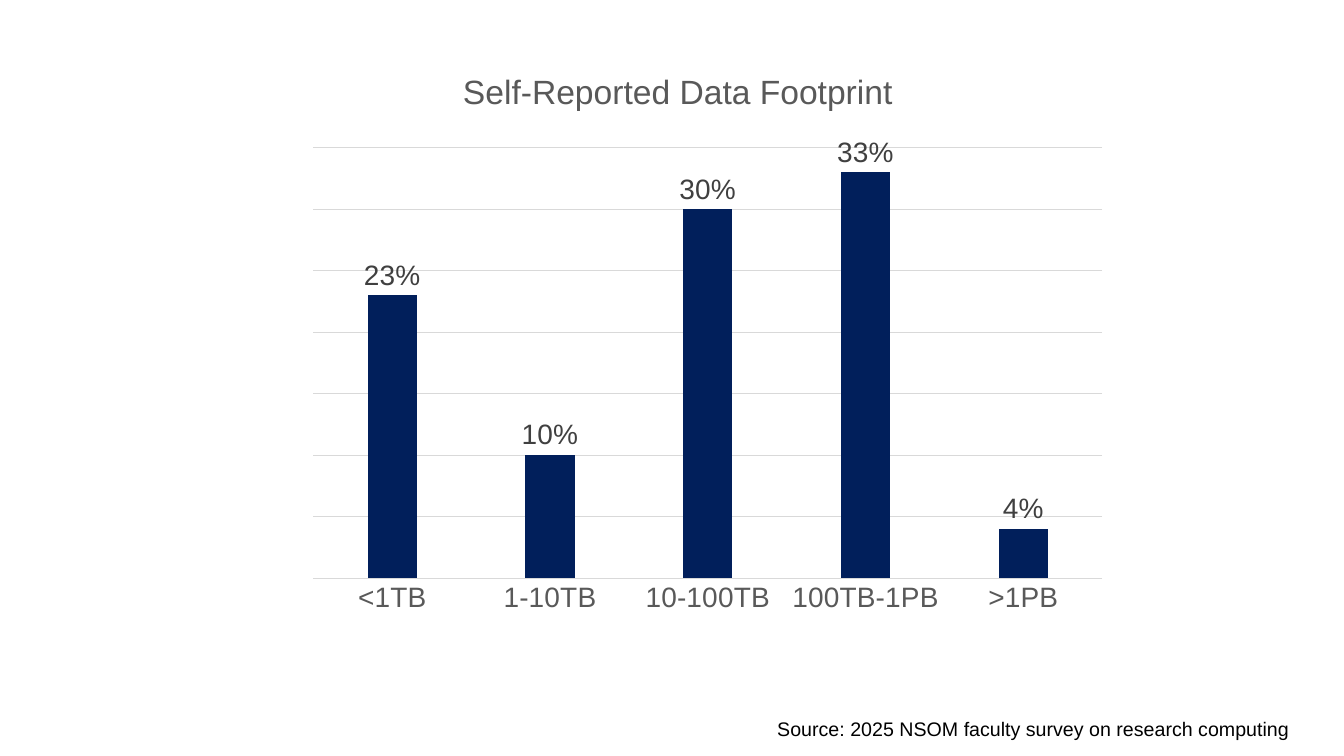
from dataclasses import dataclass

from lxml import etree
from pptx import Presentation
from pptx import util as u
from pptx.chart import data as chart_data
from pptx.dml.color import RGBColor
from pptx.enum import chart as ch
from pptx.enum import text
from pptx.oxml import ns


@dataclass(frozen=True)
class Theme:
    """Colours, typeface and type sizes of the slide."""
    font: str = "Arial"
    navy: str = "011F5B"
    grid: str = "D9D9D9"
    muted: str = "595959"
    label: str = "404040"
    ink: str = "000000"
    title_size: int = 24
    chart_size: int = 20
    source_size: int = 14


THEME = Theme()
FOOTPRINT = {"<1TB": 0.23, "1-10TB": 0.1, "10-100TB": 0.3, "100TB-1PB": 0.33, ">1PB": 0.04}


def style_font(font, size, color):
    """Apply the theme typeface with a size and colour."""
    font.name = THEME.font
    font.size = u.Pt(size)
    font.bold = False
    font.color.rgb = RGBColor.from_string(color)


def style_line(line):
    """Draw a thin rule in the grid colour."""
    line.color.rgb = RGBColor.from_string(THEME.grid)
    line.width = u.Pt(0.75)


def place(part, index, **settings):
    """Give a chart part a manual layout as fractions of the chart."""
    for existing in part.findall(ns.qn("c:layout")):
        part.remove(existing)
    layout = etree.Element(ns.qn("c:layout"))
    manual = etree.SubElement(layout, ns.qn("c:manualLayout"))
    for name, value in settings.items():
        etree.SubElement(manual, ns.qn(f"c:{name}")).set("val", str(value))
    part.insert(index, layout)


def add_title(chart, wording):
    """Add the chart title above the plot."""
    heading = chart.chart_title.text_frame.paragraphs[0]
    heading.text = wording
    style_font(heading.font, THEME.title_size, THEME.muted)
    chart.chart_title.include_in_layout = False
    place(chart._chartSpace.chart.find(ns.qn("c:title")), 1,
          xMode="edge", yMode="edge", x=0.26, y=0.05)


def style_axes(chart):
    """Show category names and gridlines, and hide the value scale."""
    sizes = chart.category_axis
    sizes.major_tick_mark = sizes.minor_tick_mark = ch.XL_TICK_MARK.NONE
    style_font(sizes.tick_labels.font, THEME.chart_size, THEME.muted)
    style_line(sizes.format.line)
    shares = chart.value_axis
    shares.visible = False
    shares.minimum_scale, shares.maximum_scale, shares.major_unit = 0, 0.35, 0.05
    shares.has_major_gridlines = True
    style_line(shares.major_gridlines.format.line)


def style_columns(plot):
    """Colour the columns and label each with its share."""
    plot.gap_width, plot.overlap, plot.vary_by_categories = 219, -27, False
    fill = plot.series[0].format.fill
    fill.solid()
    fill.fore_color.rgb = RGBColor.from_string(THEME.navy)
    labels = plot.series[0].data_labels
    labels.show_value = True
    labels.number_format, labels.number_format_is_linked = "0%", False
    labels.position = ch.XL_LABEL_POSITION.OUTSIDE_END
    style_font(labels.font, THEME.chart_size, THEME.label)


def add_footprint_chart(slide):
    """Add the column chart of data footprint shares."""
    shares = chart_data.CategoryChartData(number_format="0%")
    shares.categories = list(FOOTPRINT)
    shares.add_series("Series 1", list(FOOTPRINT.values()))
    chart = slide.shapes.add_chart(
        ch.XL_CHART_TYPE.COLUMN_CLUSTERED, u.Inches(2.22), u.Inches(0.34),
        u.Inches(8.89), u.Inches(5.93), shares).chart
    chart.has_legend = False
    style_font(chart.font, THEME.chart_size, THEME.ink)
    add_title(chart, "Self-Reported Data Footprint")
    style_axes(chart)
    style_columns(chart.plots[0])
    place(chart._chartSpace.chart.plotArea, 0, layoutTarget="inner",
          xMode="edge", yMode="edge", x=0.1, y=0.19, w=0.88, h=0.72)


def add_source(slide, wording):
    """Add the source line at the lower right."""
    frame = slide.shapes.add_textbox(
        u.Inches(7.61), u.Inches(7.06), u.Inches(5.29), u.Inches(0.34)).text_frame
    frame.word_wrap = False
    frame.auto_size = text.MSO_AUTO_SIZE.SHAPE_TO_FIT_TEXT
    source = frame.paragraphs[0]
    source.text = wording
    style_font(source.font, THEME.source_size, THEME.ink)


def main():
    """Build and save the slide."""
    deck = Presentation()
    deck.slide_width, deck.slide_height = u.Inches(13.33), u.Inches(7.5)
    slide = deck.slides.add_slide(deck.slide_layouts[6])
    add_footprint_chart(slide)
    add_source(slide, "Source: 2025 NSOM faculty survey on research computing")
    deck.save("out.pptx")


if __name__ == "__main__":
    main()
